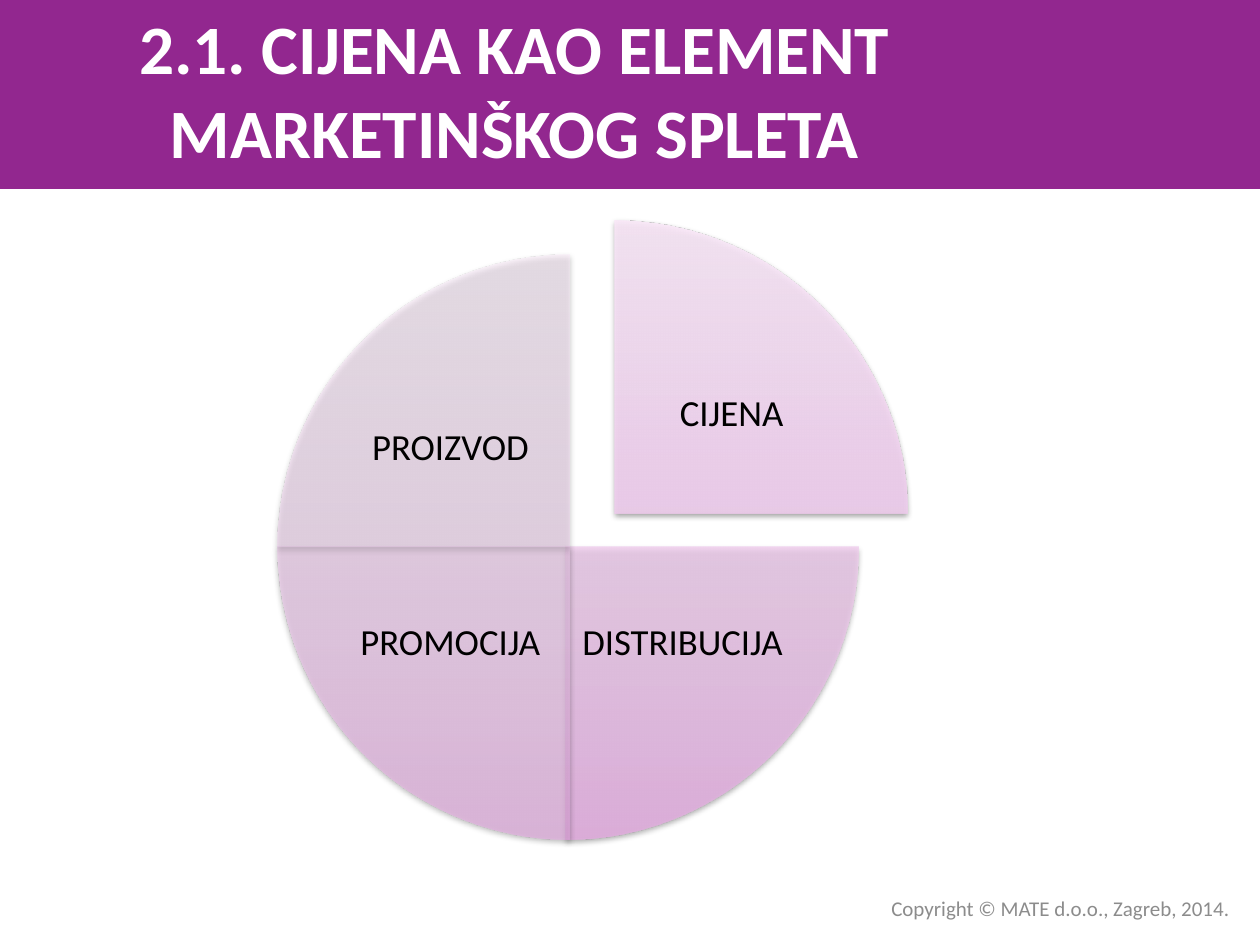
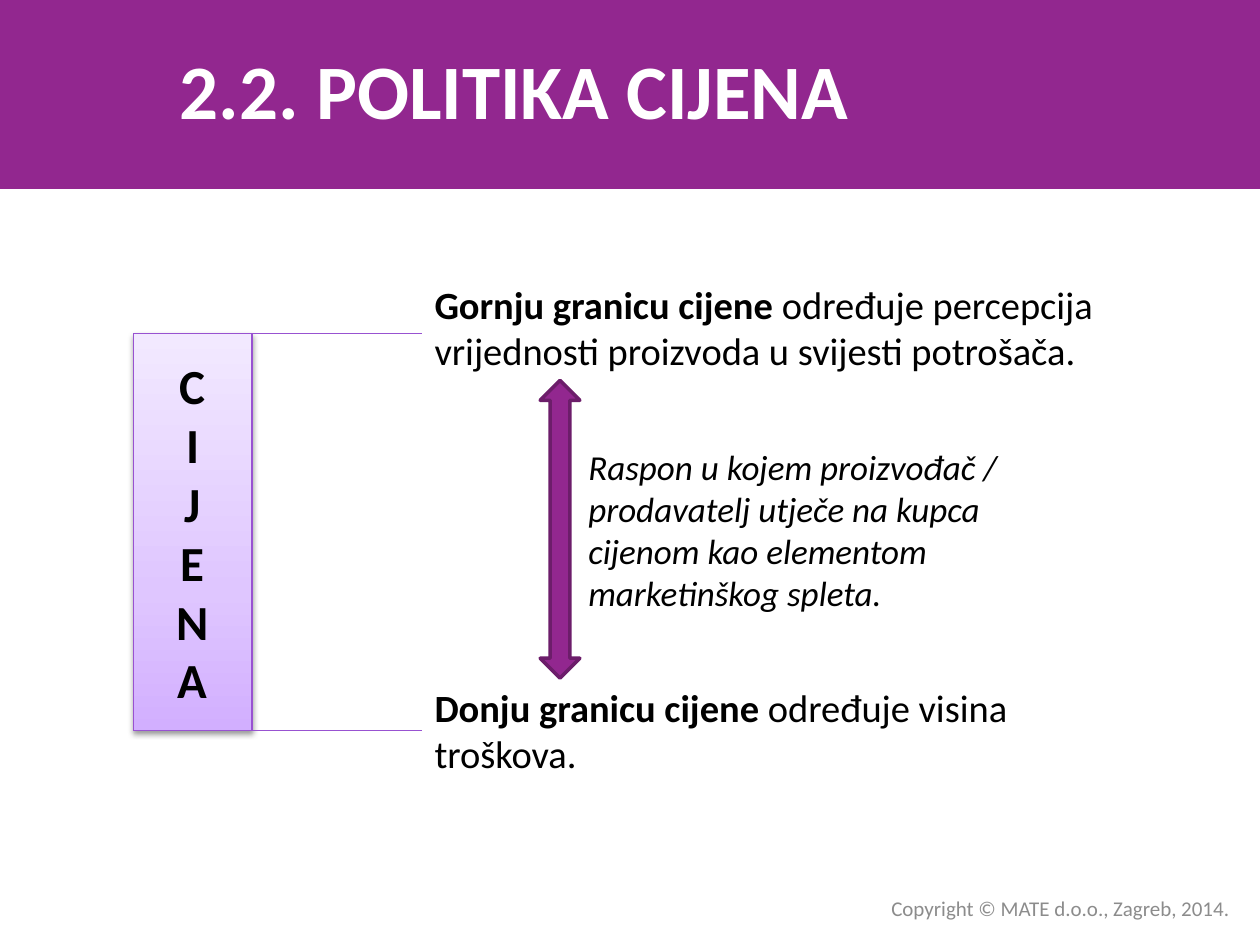
import pptx
import pptx.util
import pptx.dml.color
import pptx.enum.shapes
import pptx.enum.text
import pptx.oxml
import pptx.oxml.ns
from pptx.util import Cm

SHAPE = pptx.enum.shapes.MSO_SHAPE
ALIGN = pptx.enum.text.PP_ALIGN
ANCHOR = pptx.enum.text.MSO_ANCHOR
FONT = "Calibri"
PURPLE, PURPLE_EDGE = "92278F", "6C1D6A"
VIOLET_LINE = "9852D1"
WHITE, BLACK, GREY = "FFFFFF", "000000", "8C8C8C"
PINKS = ("E6AAE3", "ECC4EA", "F9E8F8")
VIOLETS = ("D2AFFF", "DFC6FF", "F2E9FF")
WIDTH, HEIGHT = 25.4, 19.05
BAND_HEIGHT = 3.81


def rgb(value):
    return pptx.dml.color.RGBColor.from_string(value)


def add_effects(sp, content=""):
    xml = f'<a:effectLst {pptx.oxml.ns.nsdecls("a")}>{content}</a:effectLst>'
    sp._element.spPr.append(pptx.oxml.parse_xml(xml))


def shade(sp, colors, opacity=100):
    stops = "".join(
        f'<a:gs pos="{pos}000"><a:srgbClr val="{color}">'
        f'<a:alpha val="{opacity}000"/></a:srgbClr></a:gs>'
        for pos, color in zip((0, 35, 100), colors))
    xml = (f'<a:gradFill {pptx.oxml.ns.nsdecls("a")} rotWithShape="1">'
           f'<a:gsLst>{stops}</a:gsLst><a:lin ang="16200000" scaled="0"/></a:gradFill>')
    sp._element.spPr.find(pptx.oxml.ns.qn("a:prstGeom")).addnext(pptx.oxml.parse_xml(xml))
    add_effects(sp, '<a:outerShdw blurRad="40000" dist="20000" dir="5400000" rotWithShape="0">'
                    '<a:srgbClr val="000000"><a:alpha val="38000"/></a:srgbClr></a:outerShdw>')


def add_shape(s, kind, box, fill=None, line=None, weight=0.75):
    sp = s.shapes.add_shape(kind, *map(Cm, box))
    if fill:
        sp.shadow.inherit = False
        sp.fill.solid()
        sp.fill.fore_color.rgb = rgb(fill)
    if line:
        sp.line.color.rgb = rgb(line)
        sp.line.width = pptx.util.Pt(weight)
    else:
        sp.line.fill.background()
    return sp


def write(sp, text, size, color=BLACK, align=ALIGN.CENTER, anchor=ANCHOR.MIDDLE,
          bold=False, italic=False):
    tf = sp.text_frame
    tf.word_wrap = True
    tf.vertical_anchor = anchor
    tf.text = text
    for p in tf.paragraphs:
        p.alignment = align
        for r in p.runs:
            style(r, size, color, bold, italic)
    return tf


def style(r, size, color=BLACK, bold=False, italic=False):
    r.font.name = FONT
    r.font.size = pptx.util.Pt(size)
    r.font.color.rgb = rgb(color)
    r.font.bold = bold
    r.font.italic = italic


def add_text(s, box, text, size, **options):
    return write(s.shapes.add_textbox(*map(Cm, box)), text, size, **options)


def add_frame(prs, title, size):
    s = prs.slides.add_slide(prs.slide_layouts[6])
    add_shape(s, SHAPE.RECTANGLE, (0, 0, WIDTH, BAND_HEIGHT), PURPLE)
    add_text(s, (0, 0.2, 20.75, 3.18), title, size, color=WHITE, bold=True)
    add_text(s, (11.91, 17.93, 13.13, 0.76), "Copyright © MATE d.o.o., Zagreb, 2014.",
             12, color=GREY, align=ALIGN.RIGHT)
    return s


def add_marketing_mix(s, box):
    left, top, size = box
    label_w, label_h = 4.34, 3.5
    quarters = (
        ("CIJENA", 270, 90, 0.91, -0.68),
        ("DISTRIBUCIJA", 0, 77, -0.08, 0),
        ("PROMOCIJA", 90, 63, 0, 0),
        ("PROIZVOD", 180, 50, 0, 0),
    )
    for name, start, opacity, dx, dy in quarters:
        x, y = left + dx, top + dy
        sp = add_shape(s, SHAPE.PIE, (x, y, size, size))
        sp.adjustments[0] = start * 0.6
        sp.adjustments[1] = (start + 90) % 360 * 0.6
        shade(sp, PINKS, opacity)
        label_x = x + (6.08 if start in (270, 0) else 1.32)
        label_y = y + (6.1 if start in (0, 90) else 2.16)
        tf = add_text(s, (label_x, label_y, label_w, label_h), name, 21)
        tf.margin_left = tf.margin_right = tf.margin_top = tf.margin_bottom = Cm(0.08)
        tf.paragraphs[0].line_spacing = 0.9


def add_limit(s, box, term, rest):
    sp = add_shape(s, SHAPE.RECTANGLE, box, WHITE)
    tf = write(sp, term, 22, align=ALIGN.LEFT, anchor=ANCHOR.TOP, bold=True)
    r = tf.paragraphs[0].add_run()
    r.text = rest
    style(r, 22)


def add_price_range(s, box):
    left, top, width, height = box
    bar = add_shape(s, SHAPE.RECTANGLE, (left, top, 2.39, height), line=VIOLET_LINE)
    shade(bar, VIOLETS)
    write(bar, "\n".join("CIJENA"), 28, bold=True)

    for y in (top, top + height):
        line = s.shapes.add_connector(pptx.enum.shapes.MSO_CONNECTOR.STRAIGHT,
                                      Cm(left), Cm(y), Cm(left + 10.41), Cm(y))
        line.line.color.rgb = rgb(VIOLET_LINE)
        line.line.width = pptx.util.Pt(0.75)
        add_effects(line)

    limit_x, limit_h = left + 5.82, 2.13
    limit_w = left + width - limit_x
    upper, lower = top - 1.19, top + height - 1.06
    add_limit(s, (limit_x, upper, limit_w, limit_h), "Gornju granicu cijene ",
              "određuje percepcija vrijednosti proizvoda u svijesti potrošača.")
    add_limit(s, (limit_x, lower, limit_w, limit_h), "Donju granicu cijene",
              " određuje visina troškova.")

    arrow_y = upper + limit_h
    add_shape(s, SHAPE.UP_DOWN_ARROW, (left + 8.2, arrow_y, 0.8, lower - arrow_y),
              PURPLE, PURPLE_EDGE, 2)
    span = add_shape(s, SHAPE.RECTANGLE, (left + 8.92, top + 2.13, 10, 3.68), WHITE)
    write(span, "Raspon u kojem proizvođač / prodavatelj utječe na kupca "
                "cijenom kao elementom marketinškog spleta.",
          20, align=ALIGN.LEFT, anchor=ANCHOR.TOP, italic=True)


def main():
    prs = pptx.Presentation()
    prs.slide_width, prs.slide_height = Cm(WIDTH), Cm(HEIGHT)
    s = add_frame(prs, "2.1. CIJENA KAO ELEMENT MARKETINŠKOG SPLETA", 39.6)
    add_marketing_mix(s, (5.59, 5.13, 11.79))
    s = add_frame(prs, "2.2. POLITIKA CIJENA", 44)
    add_price_range(s, (2.69, 6.73, 20.42, 8))
    prs.save("out.pptx")


if __name__ == "__main__":
    main()
